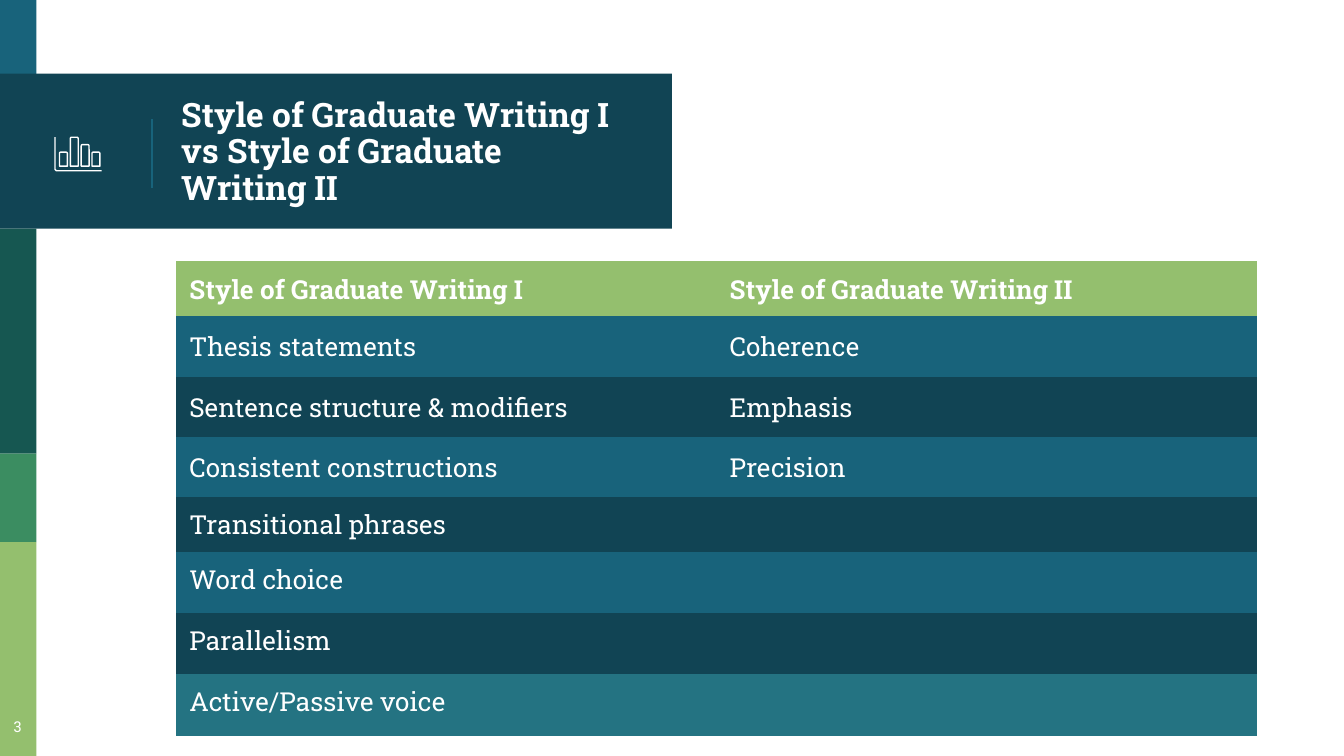
"""Build a slide that compares the topics of two writing courses."""
import lxml.etree
import pptx
import pptx.dml.color
import pptx.enum.shapes
import pptx.enum.text
import pptx.oxml.ns
import pptx.util

Pt = pptx.util.Pt
Kind = pptx.enum.shapes.MSO_SHAPE
Align = pptx.enum.text.PP_ALIGN
Anchor = pptx.enum.text.MSO_ANCHOR
qn = pptx.oxml.ns.qn

WHITE, NAVY, BLUE, TEAL = "FFFFFF", "114454", "18637B", "247382"
PINE, GREEN, LIME = "165751", "3B8D61", "94BF6E"
PLAIN = "{2D5ABB26-0587-4C30-8999-92F81FD0307C}"

ROWS = [
    (29.5, LIME, "Style of Graduate Writing I", "Style of Graduate Writing II"),
    (32.5, BLUE, "Thesis statements", "Coherence"),
    (32, NAVY, "Sentence structure & modifiers", "Emphasis"),
    (32.5, BLUE, "Consistent constructions", "Precision"),
    (29.5, NAVY, "Transitional phrases", ""),
    (32.5, BLUE, "Word choice", ""),
    (32.5, NAVY, "Parallelism", ""),
    (33.5, TEAL, "Active/Passive voice", ""),
]


def tint(form, code):
    form.solid()
    form.fore_color.rgb = pptx.dml.color.RGBColor.from_string(code)


def write(frame, text, size=14, bold=False, align=Align.LEFT, space=None):
    para = frame.paragraphs[0]
    para.alignment = align
    if space:
        para.line_spacing = space
    if not text:
        lxml.etree.SubElement(para._p, qn("a:endParaRPr"), sz=str(size * 100))
        return
    run = para.add_run()
    run.text = text
    font = run.font
    font.name, font.size, font.bold = "Roboto Slab", Pt(size), bold
    tint(font.fill, WHITE)


class Deck:
    def __init__(self, wide, high):
        self.show = pptx.Presentation()
        self.show.slide_width, self.show.slide_height = Pt(wide), Pt(high)
        self.slide = self.show.slides.add_slide(self.show.slide_layouts[6])
        self.shapes = self.slide.shapes

    def block(self, x, y, w, h, fill):
        shape = self.shapes.add_shape(Kind.RECTANGLE, Pt(x), Pt(y), Pt(w), Pt(h))
        shape.shadow.inherit = False
        tint(shape.fill, fill)
        shape.line.fill.background()

    def stroke(self, shape):
        shape.shadow.inherit = False
        shape.fill.background()
        tint(shape.line.fill, WHITE)
        shape.line.width = Pt(0.75)

    def bar(self, x, y, w, h):
        kind = Kind.ROUND_2_SAME_RECTANGLE
        self.stroke(self.shapes.add_shape(kind, Pt(x), Pt(y), Pt(w), Pt(h)))

    def trace(self, points):
        spots = [(Pt(x), Pt(y)) for x, y in points]
        pen = self.shapes.build_freeform(*spots[0])
        pen.add_line_segments(spots[1:], close=False)
        self.stroke(pen.convert_to_shape())

    def rule(self, x, top, end, color):
        kind = pptx.enum.shapes.MSO_CONNECTOR.STRAIGHT
        line = self.shapes.add_connector(kind, Pt(x), Pt(top), Pt(x), Pt(end))
        tint(line.line.fill, color)
        line.line.width = Pt(0.75)
        lxml.etree.SubElement(line._element.spPr, qn("a:effectLst"))

    def label(self, x, y, w, h, text, anchor=Anchor.TOP, **style):
        frame = self.shapes.add_textbox(Pt(x), Pt(y), Pt(w), Pt(h)).text_frame
        frame.word_wrap = True
        frame.vertical_anchor = anchor
        frame.margin_left = frame.margin_right = Pt(7.2)
        frame.margin_top = frame.margin_bottom = Pt(7.2)
        write(frame, text, **style)

    def table(self, x, y, w, rows):
        high = sum(row[0] for row in rows)
        shape = self.shapes.add_table(len(rows), 2, Pt(x), Pt(y), Pt(w), Pt(high))
        grid = shape.table
        grid.horz_banding = False
        grid._tbl.tblPr.find(qn("a:tableStyleId")).text = PLAIN
        for i, (tall, fill, *texts) in enumerate(rows):
            grid.rows[i].height = Pt(tall)
            for j, text in enumerate(texts):
                cell = grid.cell(i, j)
                tint(cell.fill, fill)
                cell.margin_left = cell.margin_right = Pt(7.2)
                cell.margin_top = cell.margin_bottom = Pt(5.4)
                cell.vertical_anchor = Anchor.MIDDLE if i < 4 else Anchor.TOP
                write(cell.text_frame, text, bold=i == 0)


def main():
    deck = Deck(720, 405)
    edge = 19.5
    deck.block(0, 0, edge, 42, BLUE)
    deck.block(0, 39.5, 360, 83, NAVY)
    stops = [122.5, 243, 290.5, 405]
    for top, end, fill in zip(stops, stops[1:], (PINE, GREEN, LIME)):
        deck.block(0, top, edge, end - top, fill)
    deck.rule(81.5, 64, 100.5, BLUE)
    deck.label(90, 41.5, 253, 81,
               "Style of Graduate Writing I vs Style of Graduate Writing II",
               anchor=Anchor.MIDDLE, size=18, bold=True, space=0.9)
    deck.table(94.25, 140, 579, ROWS)
    deck.trace([(29.5, 73.5), (29.5, 90.75), (30.25, 91.5), (54.5, 91.5)])
    base = 89
    for i, high in enumerate((7.5, 15.5, 11.5, 7.5)):
        deck.bar(31.9 + 5.8 * i, base - high, 4.25, high)
    deck.label(-4.25, 379.5, 27.5, 25, "3", size=8, align=Align.CENTER)
    deck.show.save("out.pptx")


if __name__ == "__main__":
    main()
